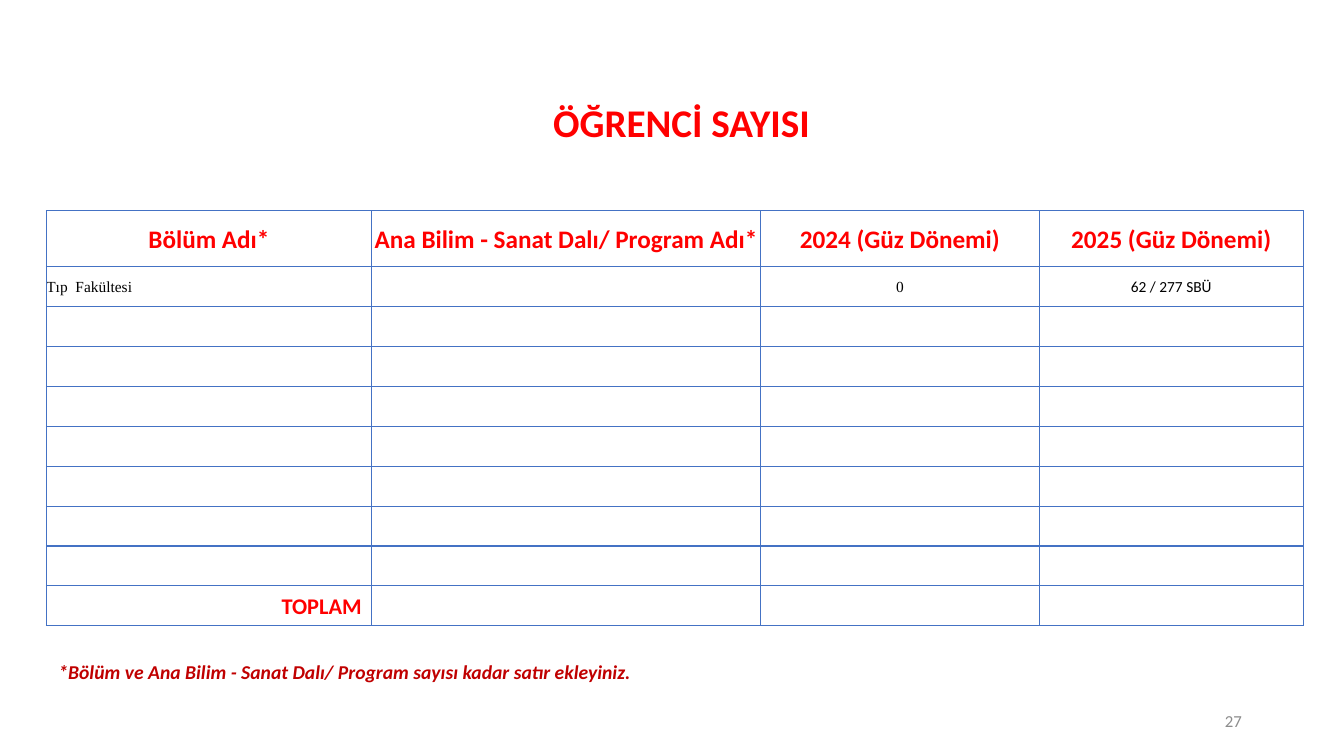
from pptx import Presentation
from pptx.util import Pt
from pptx.dml.color import RGBColor
from pptx.enum.text import PP_ALIGN as Align, MSO_ANCHOR as Anchor
from pptx.oxml import parse_xml
from pptx.oxml.ns import nsdecls

RED = "FF0000"
BLUE = "4472C4"


def color(code):
    return RGBColor.from_string(code)


class Deck:
    face = "Calibri"

    def __init__(self):
        self.prs = Presentation()
        self.prs.slide_width = Pt(960)
        self.prs.slide_height = Pt(540)
        self.slide = self.prs.slides.add_slide(self.prs.slide_layouts[5])

    def style(self, frame, text, size, ink, align=Align.LEFT, bold=False,
              italic=False, face=None, space=None):
        para = frame.paragraphs[0]
        para.text = text
        para.alignment = align
        if space:
            para.line_spacing = space
        font = para.font
        font.name = face or self.face
        font.size = Pt(size)
        font.bold = bold
        font.italic = italic
        font.color.rgb = color(ink)

    def title(self, box, text):
        shape = self.slide.shapes.title
        shape.left, shape.top, shape.width, shape.height = map(Pt, box)
        shape.text_frame.vertical_anchor = Anchor.MIDDLE
        self.style(shape.text_frame, text, 28, RED, Align.CENTER, True, space=0.9)

    def text(self, box, text, size, ink, anchor=Anchor.TOP, **looks):
        frame = self.slide.shapes.add_textbox(*map(Pt, box)).text_frame
        frame.word_wrap = True
        frame.vertical_anchor = anchor
        self.style(frame, text, size, ink, **looks)

    def border(self, cell):
        props = cell._tc.get_or_add_tcPr()
        for side in "LRTB":
            props.append(parse_xml(
                f'<a:ln{side} {nsdecls("a")} w="{Pt(1)}"><a:solidFill>'
                f'<a:srgbClr val="{BLUE}"/></a:solidFill></a:ln{side}>'))

    def table(self, left, top, cols, rows):
        frame = self.slide.shapes.add_table(
            len(rows), len(cols), Pt(left), Pt(top), Pt(sum(cols)), Pt(sum(rows)))
        grid = frame.table
        grid.first_row = grid.horz_banding = False
        for col, width in zip(grid.columns, cols):
            col.width = Pt(width)
        for row, height in zip(grid.rows, rows):
            row.height = Pt(height)
        for cell in grid.iter_cells():
            cell.margin_left = cell.margin_right = 0
            cell.margin_top = cell.margin_bottom = 0
            cell.vertical_anchor = Anchor.MIDDLE
            self.border(cell)
            cell.fill.background()
        return grid

    def cell(self, cell, text, size, ink, **looks):
        self.style(cell.text_frame, text, size, ink, space=1.07, **looks)


def main():
    deck = Deck()
    deck.title((52.6, 69.1, 868.3, 40.3), "ÖĞRENCİ SAYISI")
    deck.text((678.2, 500.4, 216, 28.8), "27", 12, "8C8C8C", Anchor.MIDDLE,
              align=Align.RIGHT)

    grid = deck.table(33.1, 150.5, [232.4, 277.9, 198.9, 188.8], [40.1] + [28.5] * 9)
    heads = ["Bölüm Adı*", "Ana Bilim - Sanat Dalı/ Program Adı*",
             "2024 (Güz Dönemi)", "2025 (Güz Dönemi)"]
    for col, head in enumerate(heads):
        deck.cell(grid.cell(0, col), head, 18, RED, align=Align.CENTER, bold=True)

    serif = "Times New Roman"
    deck.cell(grid.cell(1, 0), "Tıp  Fakültesi", 11, "000000", face=serif)
    deck.cell(grid.cell(1, 2), "0", 11, "000000", align=Align.CENTER, face=serif)
    deck.cell(grid.cell(1, 3), "62 / 277 SBÜ", 11, "000000", align=Align.CENTER)

    total = grid.cell(9, 0)
    total.margin_right = Pt(7.2)
    deck.cell(total, "TOPLAM", 16, RED, align=Align.RIGHT, bold=True)

    deck.text((34.6, 468, 610.6, 24.5),
              "*Bölüm ve Ana Bilim - Sanat Dalı/ Program sayısı kadar satır ekleyiniz.",
              14, "C00000", bold=True, italic=True)
    deck.prs.save("out.pptx")


if __name__ == "__main__":
    main()
